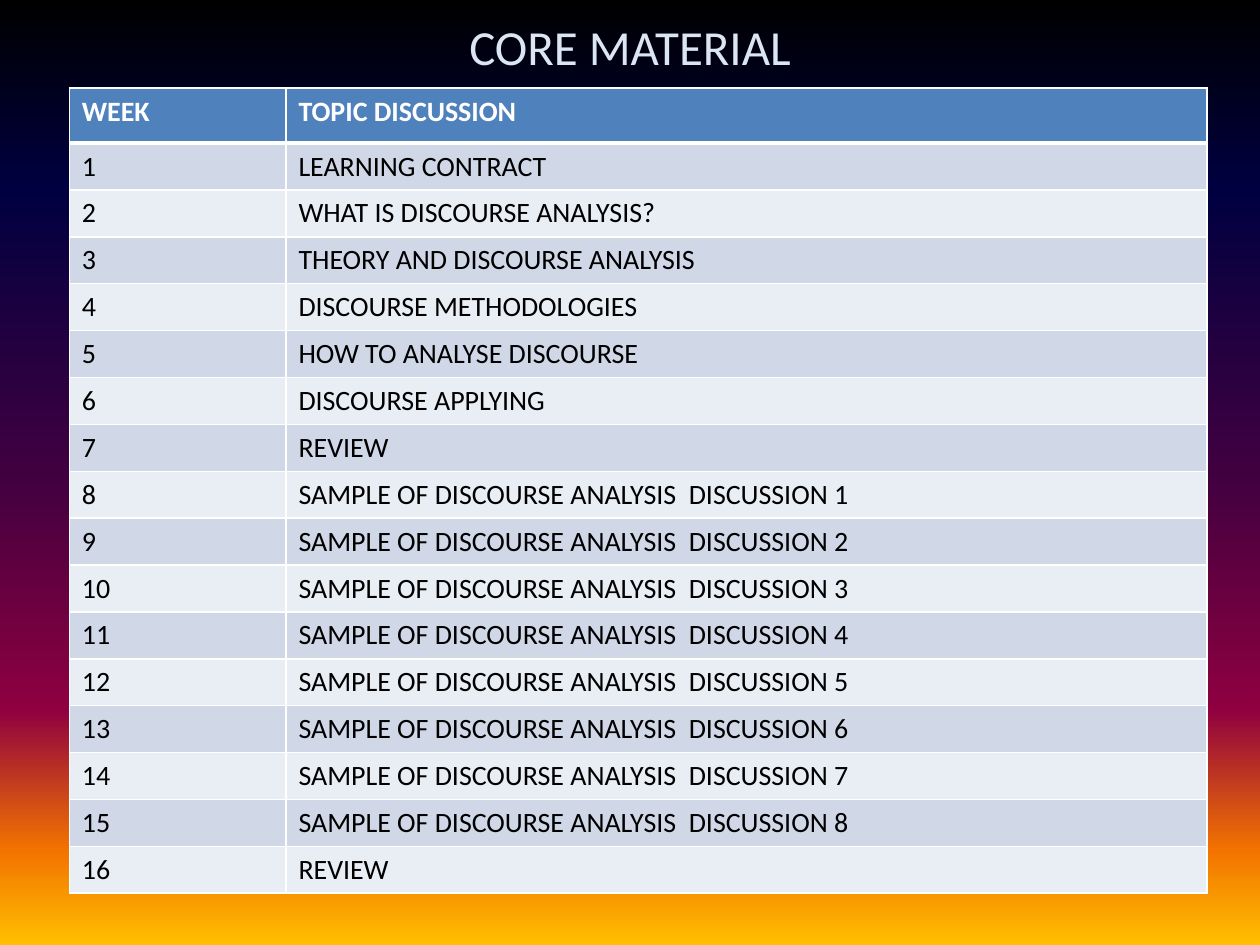
"""Build the weekly course plan slide."""
from dataclasses import dataclass

from pptx import Presentation
from pptx.dml.color import RGBColor as Rgb
from pptx.enum.text import MSO_ANCHOR as Anchor, PP_ALIGN as Align
from pptx.oxml.ns import qn
from pptx.util import Pt
from lxml.etree import SubElement as Sub

FONT = "Calibri"
WHITE = "FFFFFF"
STOPS = {0: "000000", 20: "000040", 50: "400040",
         75: "8F0040", 90: "F27300", 100: "FFBF00"}
BANDS = ("D0D8E8", "E9EDF4")
SAMPLES = [f"SAMPLE OF DISCOURSE ANALYSIS  DISCUSSION {n}" for n in range(1, 9)]
TOPICS = ["LEARNING CONTRACT", "WHAT IS DISCOURSE ANALYSIS?",
          "THEORY AND DISCOURSE ANALYSIS", "DISCOURSE METHODOLOGIES",
          "HOW TO ANALYSE DISCOURSE", "DISCOURSE APPLYING", "REVIEW",
          *SAMPLES, "REVIEW"]
WIDTHS = (123.8, 526.3)
HEAD, ROW = 31.4, 26.8


@dataclass
class Line:
    week: str
    topic: str
    fill: str
    ink: str = "000000"
    bold: bool = False
    high: float = ROW
    top: int = 1
    base: int = 1


def tint(code: str) -> Rgb:
    return Rgb.from_string(code)


def style(target, values: dict) -> None:
    for name, value in values.items():
        setattr(target, name, value)


def write(frame, text: str, size: int, ink: str, bold: bool = False) -> None:
    frame.text = text
    font = frame.paragraphs[0].runs[0].font
    style(font, {"name": FONT, "size": Pt(size), "bold": bold})
    font.color.rgb = tint(ink)


def shade(slide) -> None:
    fill = slide.background.fill
    fill.gradient()
    fill.gradient_angle = 270
    stops = next(slide.element.iter(qn("a:gsLst")))
    stops.clear()
    for place, code in STOPS.items():
        stop = Sub(stops, qn("a:gs"), pos=str(place * 1000))
        Sub(stop, qn("a:srgbClr"), val=code)


def edge(cell, sides: dict) -> None:
    props = cell._tc.get_or_add_tcPr()
    for spot, (side, width) in enumerate(sides.items()):
        line = props.makeelement(qn(f"a:ln{side}"), {"w": str(Pt(width))})
        Sub(Sub(line, qn("a:solidFill")), qn("a:srgbClr"), val=WHITE)
        props.insert(spot, line)


def draw(table, index: int, line: Line) -> None:
    table.rows[index].height = Pt(line.high)
    for cell, text in zip(table.rows[index].cells, (line.week, line.topic)):
        write(cell.text_frame, text, 16, line.ink, line.bold)
        cell.fill.solid()
        cell.fill.fore_color.rgb = tint(line.fill)
        edge(cell, {"L": 1, "R": 1, "T": line.top, "B": line.base})


def main() -> None:
    deck = Presentation()
    style(deck, {"slide_width": Pt(720), "slide_height": Pt(540)})
    slide = deck.slides.add_slide(deck.slide_layouts[5])
    shade(slide)

    title = slide.shapes.title
    style(title, {"left": Pt(36), "top": Pt(0),
                  "width": Pt(648), "height": Pt(52)})
    write(title.text_frame, "CORE MATERIAL", 28, "DCE6F2")
    title.text_frame.vertical_anchor = Anchor.MIDDLE
    title.text_frame.paragraphs[0].alignment = Align.CENTER

    lines = [Line("WEEK", "TOPIC DISCUSSION", "4F81BD", WHITE, True, HEAD, base=3)]
    for week, topic in enumerate(TOPICS, 1):
        lines.append(Line(str(week), topic, BANDS[(week - 1) % 2],
                          top=3 if week == 1 else 1))
    table = slide.shapes.add_table(
        len(lines), len(WIDTHS), Pt(39.6), Pt(50.4),
        Pt(sum(WIDTHS)), Pt(sum(line.high for line in lines))).table
    for col, width in zip(table.columns, WIDTHS):
        col.width = Pt(width)
    for index, line in enumerate(lines):
        draw(table, index, line)

    deck.save("out.pptx")


if __name__ == "__main__":
    main()
